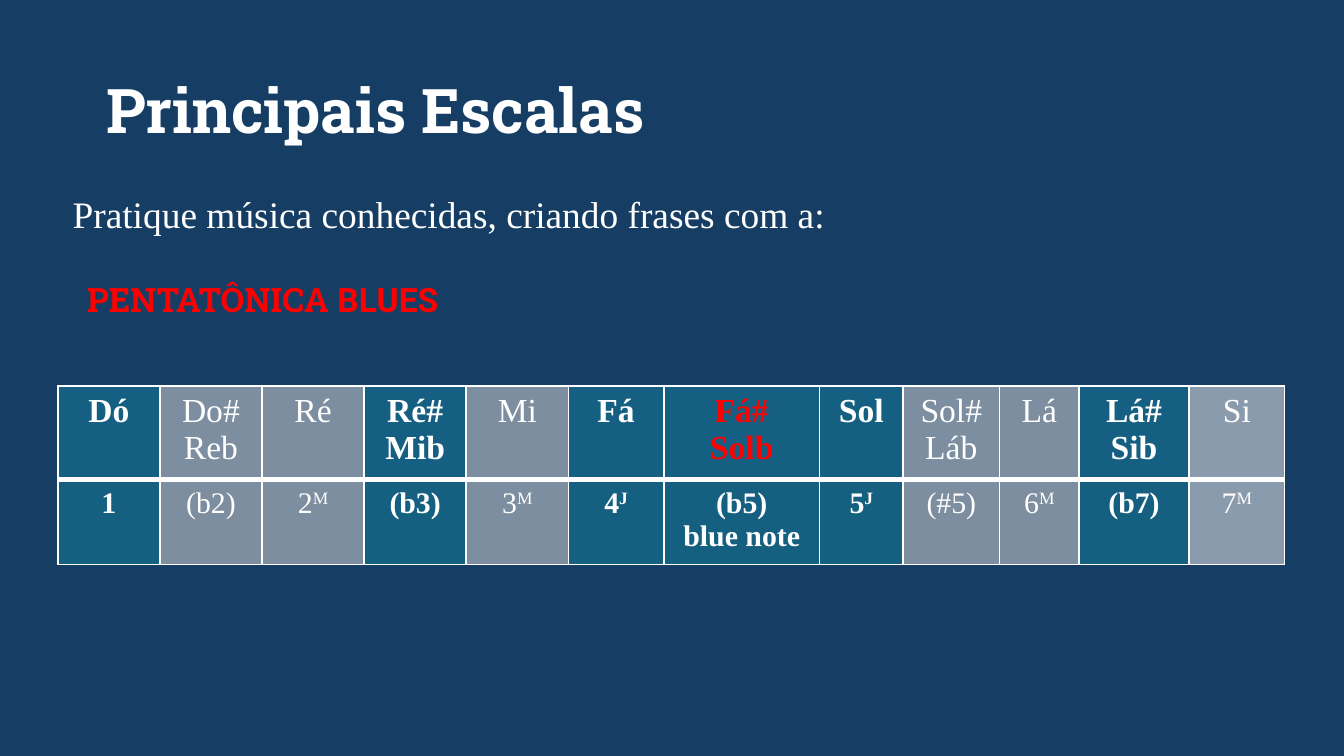
"""Build a slide showing the blues pentatonic scale as a table of notes and degrees."""
from dataclasses import dataclass

import lxml.etree
import pptx
import pptx.dml.color
import pptx.enum.text
import pptx.oxml.ns
import pptx.slide
import pptx.table
import pptx.text.text
from pptx.dml.color import RGBColor
from pptx.util import Inches

NAVY = RGBColor(0x16, 0x3E, 0x64)
TEAL = RGBColor(0x15, 0x60, 0x82)
GRAY = RGBColor(0xD1, 0xD1, 0xD1)
LIGHT_GRAY = RGBColor(0xE8, 0xE8, 0xE8)
WHITE = RGBColor(0xFF, 0xFF, 0xFF)
RED = RGBColor(0xFF, 0x00, 0x00)

SERIF = "Times New Roman"
SLAB = "Roboto Slab"
ROW_HEIGHTS = (0.7, 0.63)


@dataclass(frozen=True)
class Note:
    """One column: note names, scale degree and its quality."""

    names: str
    degree: str
    width: float
    quality: str = ""
    in_scale: bool = False
    name_color: RGBColor = WHITE
    off_scale_fill: RGBColor = GRAY


NOTES = (
    Note("Dó", "1", 0.76, in_scale=True),
    Note("Do#\nReb", "(b2)", 0.76),
    Note("Ré", "2", 0.76, "M"),
    Note("Ré#\nMib", "(b3)", 0.76, in_scale=True),
    Note("Mi", "3", 0.76, "M"),
    Note("Fá", "4", 0.71, "J", in_scale=True),
    Note("Fá#\nSolb", "(b5)\nblue note", 1.16, in_scale=True, name_color=RED),
    Note("Sol", "5", 0.62, "J", in_scale=True),
    Note("Sol#\nLáb", "(#5)", 0.72),
    Note("Lá", "6", 0.59, "M"),
    Note("Lá#\nSib", "(b7)", 0.82, in_scale=True),
    Note("Si", "7", 0.71, "M", off_scale_fill=LIGHT_GRAY),
)


def format_run(run: pptx.text.text._Run, font_name: str, size: float,
               color: RGBColor, bold: bool = False) -> None:
    """Set the font of a run."""
    run.font.name = font_name
    run.font.size = pptx.util.Pt(size)
    run.font.color.rgb = color
    run.font.bold = bold


def set_borders(cell: pptx.table._Cell, widths: dict[str, float]) -> None:
    """Draw white borders of the given point widths, keyed by side."""
    properties = cell._tc.get_or_add_tcPr()
    for index, (side, width) in enumerate(widths.items()):
        line = lxml.etree.Element(pptx.oxml.ns.qn(f"a:ln{side}"),
                                  w=str(pptx.util.Pt(width)))
        fill = lxml.etree.SubElement(line, pptx.oxml.ns.qn("a:solidFill"))
        lxml.etree.SubElement(fill, pptx.oxml.ns.qn("a:srgbClr"), val=str(WHITE))
        properties.insert(index, line)


def fill_cell(cell: pptx.table._Cell, color: RGBColor, opacity: int) -> None:
    """Fill a cell with a color at a percentage of opacity."""
    cell.fill.solid()
    cell.fill.fore_color.rgb = color
    color_element = cell._tc.tcPr.find(".//" + pptx.oxml.ns.qn("a:srgbClr"))
    lxml.etree.SubElement(color_element, pptx.oxml.ns.qn("a:alpha"),
                          val=str(opacity * 1000))


def write_cell(cell: pptx.table._Cell, text: str, size: float,
               color: RGBColor, bold: bool, superscript: str = "") -> None:
    """Write centred text, with an optional superscript at its end."""
    cell.text_frame.text = text
    if superscript:
        run = cell.text_frame.paragraphs[-1].add_run()
        run.text = superscript
        run._r.get_or_add_rPr().set("baseline", "30000")
    for paragraph in cell.text_frame.paragraphs:
        paragraph.alignment = pptx.enum.text.PP_ALIGN.CENTER
        for run in paragraph.runs:
            format_run(run, SERIF, size, color, bold)


def add_headings(slide: pptx.slide.Slide) -> None:
    """Fill the title and body placeholders."""
    title = slide.shapes.title
    title.left, title.top = Inches(0.69), Inches(0.3)
    title.width, title.height = Inches(8.62), Inches(1.09)
    title.text_frame.text = "Principais Escalas"
    title.text_frame.vertical_anchor = pptx.enum.text.MSO_ANCHOR.MIDDLE
    paragraph = title.text_frame.paragraphs[0]
    paragraph.alignment = pptx.enum.text.PP_ALIGN.LEFT
    paragraph.line_spacing = 0.9
    format_run(paragraph.runs[0], SLAB, 33, WHITE, True)

    body = slide.placeholders[1]
    body.left, body.top = Inches(0.44), Inches(1.37)
    body.width, body.height = Inches(9.01), Inches(2.89)
    body.text_frame.text = "Pratique música conhecidas, criando frases com a:"
    body.text_frame.auto_size = pptx.enum.text.MSO_AUTO_SIZE.NONE
    paragraph = body.text_frame.paragraphs[0]
    paragraph.space_before = pptx.util.Pt(0)
    properties = paragraph._p.get_or_add_pPr()
    properties.set("marL", "0")
    properties.set("indent", "0")
    lxml.etree.SubElement(properties, pptx.oxml.ns.qn("a:buNone"))
    format_run(paragraph.runs[0], SERIF, 20, WHITE)


def add_scale_table(slide: pptx.slide.Slide) -> None:
    """Add the table with note names above scale degrees."""
    table = slide.shapes.add_table(
        len(ROW_HEIGHTS), len(NOTES), Inches(0.43), Inches(2.87),
        Inches(sum(note.width for note in NOTES)), Inches(sum(ROW_HEIGHTS))).table
    for row, height in zip(table.rows, ROW_HEIGHTS):
        row.height = Inches(height)
    for index, note in enumerate(NOTES):
        table.columns[index].width = Inches(note.width)
        name_cell, degree_cell = table.cell(0, index), table.cell(1, index)
        write_cell(name_cell, note.names, 18, note.name_color, note.in_scale)
        write_cell(degree_cell, note.degree, 16, WHITE, note.in_scale, note.quality)
        color = TEAL if note.in_scale else note.off_scale_fill
        fill_cell(name_cell, color, 100 if note.in_scale else 55)
        fill_cell(degree_cell, color, 98 if note.in_scale else 55)
        set_borders(name_cell, {"L": 1, "R": 1, "T": 1, "B": 3})
        set_borders(degree_cell, {"L": 1, "R": 1, "T": 3, "B": 1})


def add_scale_name(slide: pptx.slide.Slide) -> None:
    """Add the red name of the scale."""
    label = slide.shapes.add_textbox(Inches(0.55), Inches(2.03),
                                     Inches(3.64), Inches(0.4))
    label.text_frame.word_wrap = True
    paragraph = label.text_frame.paragraphs[0]
    for text, font_name in (("PENTATÔNICA", SLAB), (" BLUES", "Roboto")):
        run = paragraph.add_run()
        run.text = text
        format_run(run, font_name, 18, RED, True)


def main() -> None:
    """Build and save the presentation."""
    presentation = pptx.Presentation()
    presentation.slide_width = Inches(10)
    presentation.slide_height = Inches(10) * 9 // 16
    slide = presentation.slides.add_slide(presentation.slide_layouts[1])
    slide.background.fill.solid()
    slide.background.fill.fore_color.rgb = NAVY
    add_headings(slide)
    add_scale_table(slide)
    add_scale_name(slide)
    presentation.save("out.pptx")


if __name__ == "__main__":
    main()
